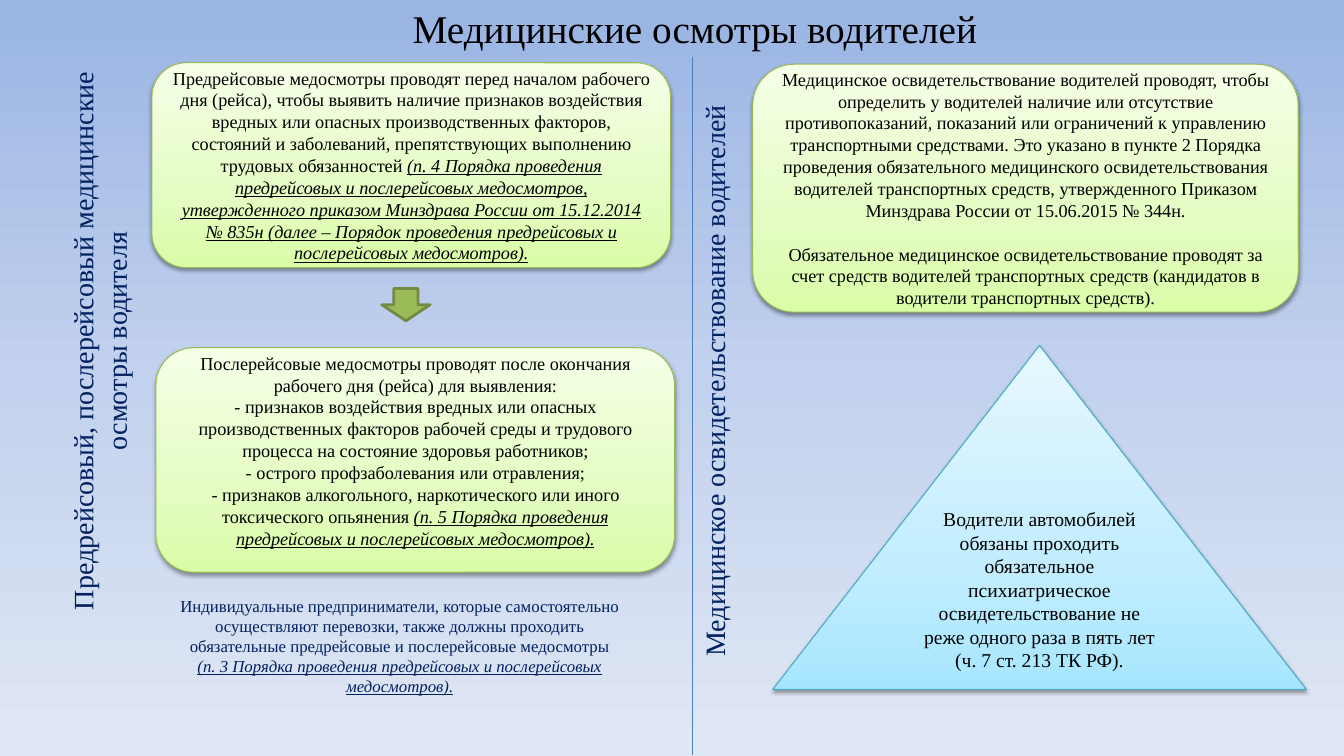
import lxml.etree
import pptx
import pptx.dml.color
import pptx.enum.shapes
import pptx.enum.text
import pptx.util

KIND = pptx.enum.shapes.MSO_SHAPE
ALIGN = pptx.enum.text.PP_ALIGN
ANCHOR = pptx.enum.text.MSO_ANCHOR


def color(code):
    return pptx.dml.color.RGBColor.from_string(code)


def child(root, tag, **attrs):
    name = pptx.oxml.ns.qn("a:" + tag)
    return lxml.etree.SubElement(root, name, {k: str(v) for k, v in attrs.items()})


class Deck:
    font = "Times New Roman"
    ink, navy = "000000", "002060"
    green = ("DAFDA7", "E4FCC2", "F5FFE7"), "98B955"
    blue = ("A7E6FF", "C1EDFF", "E7F8FF"), "46AAC5"

    def __init__(self):
        self.file = pptx.Presentation()
        self.file.slide_width = pptx.util.Inches(13.33)
        self.file.slide_height = pptx.util.Inches(7.5)
        self.page = self.file.slides.add_slide(self.file.slide_layouts[6])

    def place(self, *area):
        """Turn percent of the slide's width and height into lengths."""
        sides = (self.file.slide_width, self.file.slide_height) * 2
        return [round(side * part / 100) for side, part in zip(sides, area)]

    def blend(self, fill, root, codes, angle, middle):
        fill.gradient()
        fill.gradient_angle = angle
        stops = root.xpath(".//a:gsLst")[0]
        stops.clear()
        for code, pos in zip(codes, (0, middle, 100)):
            child(child(stops, "gs", pos=pos * 1000), "srgbClr", val=code)

    def paint(self, codes):
        fill = self.page.background.fill
        self.blend(fill, self.page._element, codes, 270, 50)

    def letter(self, shape, lines, size, code, align=ALIGN.CENTER,
               anchor=ANCHOR.MIDDLE, top=0.05, bottom=0.05, gap=0):
        """Each line is a pair: plain words and underlined source."""
        frame = shape.text_frame
        frame.word_wrap = True
        frame.vertical_anchor = anchor
        frame.margin_top = pptx.util.Inches(top)
        frame.margin_bottom = pptx.util.Inches(bottom)
        for i, (plain, source) in enumerate(lines):
            para = frame.add_paragraph() if i else frame.paragraphs[0]
            para.text = plain
            para.alignment = align
            if i and gap:
                para.space_before = pptx.util.Pt(gap)
            if source:
                run = para.add_run()
                run.text = source
                run.font.italic = run.font.underline = True
            for run in para.runs:
                run.font.name = self.font
                run.font.size = pptx.util.Pt(size)
                run.font.color.rgb = color(code)

    def label(self, area, plain, size, code, source="", turn=0, **look):
        box = self.page.shapes.add_textbox(*self.place(*area))
        box.rotation = turn
        self.letter(box, [(plain, source)], size, code, anchor=ANCHOR.TOP, **look)

    def shape(self, kind, area, edge, width):
        item = self.page.shapes.add_shape(kind, *self.place(*area))
        item.shadow.inherit = False
        item.line.color.rgb = color(edge)
        item.line.width = pptx.util.Pt(width)
        return item

    def card(self, kind, area, theme, lines, size, **look):
        codes, edge = theme
        item = self.shape(kind, area, edge, 0.75)
        self.blend(item.fill, item._element, codes, 90, 35)
        effects = item._element.spPr.xpath("a:effectLst")[0]
        shade = child(effects, "outerShdw", blurRad=pptx.util.Pt(3.1),
                      dist=pptx.util.Pt(1.6), dir=5400000, rotWithShape=0)
        child(child(shade, "srgbClr", val=self.ink), "alpha", val=38000)
        self.letter(item, lines, size, self.ink, **look)

    def arrow(self, area, turn):
        item = self.shape(KIND.RIGHT_ARROW, area, "738A42", 2)
        item.rotation = turn
        item.fill.solid()
        item.fill.fore_color.rgb = color("9BBB59")

    def rule(self, *ends):
        kind = pptx.enum.shapes.MSO_CONNECTOR.STRAIGHT
        line = self.page.shapes.add_connector(kind, *self.place(*ends))
        line.line.color.rgb = color("4B7EBC")
        line.line.width = pptx.util.Pt(0.75)
        child(line._element.spPr, "effectLst")


def main():
    deck = Deck()
    deck.paint(("9AB5E4", "C2D1ED", "E1E8F5"))

    # Title and divider
    deck.label((12.6, -0.1, 78.2, 7.6), "Медицинские осмотры водителей", 28, deck.ink)
    deck.rule(51.5, 7.6, 51.5, 99.9)

    # Side headings
    deck.label((-18.6, 37.7, 49.7, 14.8),
               "Предрейсовый, послерейсовый медицинские осмотры водителя",
               20, deck.navy, turn=270, top=0.37)
    deck.label((30.4, 44.8, 45.5, 5.9), "Медицинское освидетельствование водителей",
               20, deck.navy, turn=270, align=ALIGN.LEFT)

    # Left half: before and after the trip
    deck.card(KIND.ROUNDED_RECTANGLE, (11.3, 8.3, 38.6, 27.1), deck.green, [(
        "Предрейсовые медосмотры проводят перед началом рабочего дня (рейса), "
        "чтобы выявить наличие признаков воздействия вредных или опасных "
        "производственных факторов, состояний и заболеваний, препятствующих "
        "выполнению трудовых обязанностей ",
        "(п. 4 Порядка проведения предрейсовых и послерейсовых медосмотров, "
        "утвержденного приказом Минздрава России от 15.12.2014 № 835н (далее – "
        "Порядок проведения предрейсовых и послерейсовых медосмотров).")], 13)
    deck.arrow((29, 37.1, 2.4, 6.4), 90)
    deck.card(KIND.ROUNDED_RECTANGLE, (11.6, 46, 38.6, 29.7), deck.green, [
        ("Послерейсовые медосмотры проводят после окончания рабочего дня (рейса) "
         "для выявления:", ""),
        ("- признаков воздействия вредных или опасных производственных факторов "
         "рабочей среды и трудового процесса на состояние здоровья работников;", ""),
        ("- острого профзаболевания или отравления;", ""),
        ("- признаков алкогольного, наркотического или иного токсического опьянения ",
         "(п. 5 Порядка проведения предрейсовых и послерейсовых медосмотров).")],
        13, bottom=0.24)
    deck.label((12.6, 78.1, 34.3, 17.5),
               "Индивидуальные предприниматели, которые самостоятельно осуществляют "
               "перевозки, также должны проходить обязательные предрейсовые и "
               "послерейсовые медосмотры ", 12, deck.navy,
               "(п. 3 Порядка проведения предрейсовых и послерейсовых медосмотров).")

    # Right half: certification
    deck.card(KIND.ROUNDED_RECTANGLE, (56, 8.5, 40.6, 32.8), deck.green, [
        ("Медицинское освидетельствование водителей проводят, чтобы определить у "
         "водителей наличие или отсутствие противопоказаний, показаний или "
         "ограничений к управлению транспортными средствами. Это указано в пункте "
         "2 Порядка проведения обязательного медицинского освидетельствования "
         "водителей транспортных средств, утвержденного Приказом Минздрава России "
         "от 15.06.2015 № 344н.", ""),
        ("Обязательное медицинское освидетельствование проводят за счет средств "
         "водителей транспортных средств (кандидатов в водители транспортных "
         "средств).", "")], 13, gap=15.6)
    deck.card(KIND.ISOSCELES_TRIANGLE, (57.5, 45.7, 39.7, 45.5), deck.blue, [(
        "Водители автомобилей обязаны проходить обязательное психиатрическое "
        "освидетельствование не реже одного раза в пять лет (ч. 7 ст. 213 ТК РФ).",
        "")], 14, bottom=0.33)

    deck.file.save("out.pptx")


if __name__ == "__main__":
    main()
